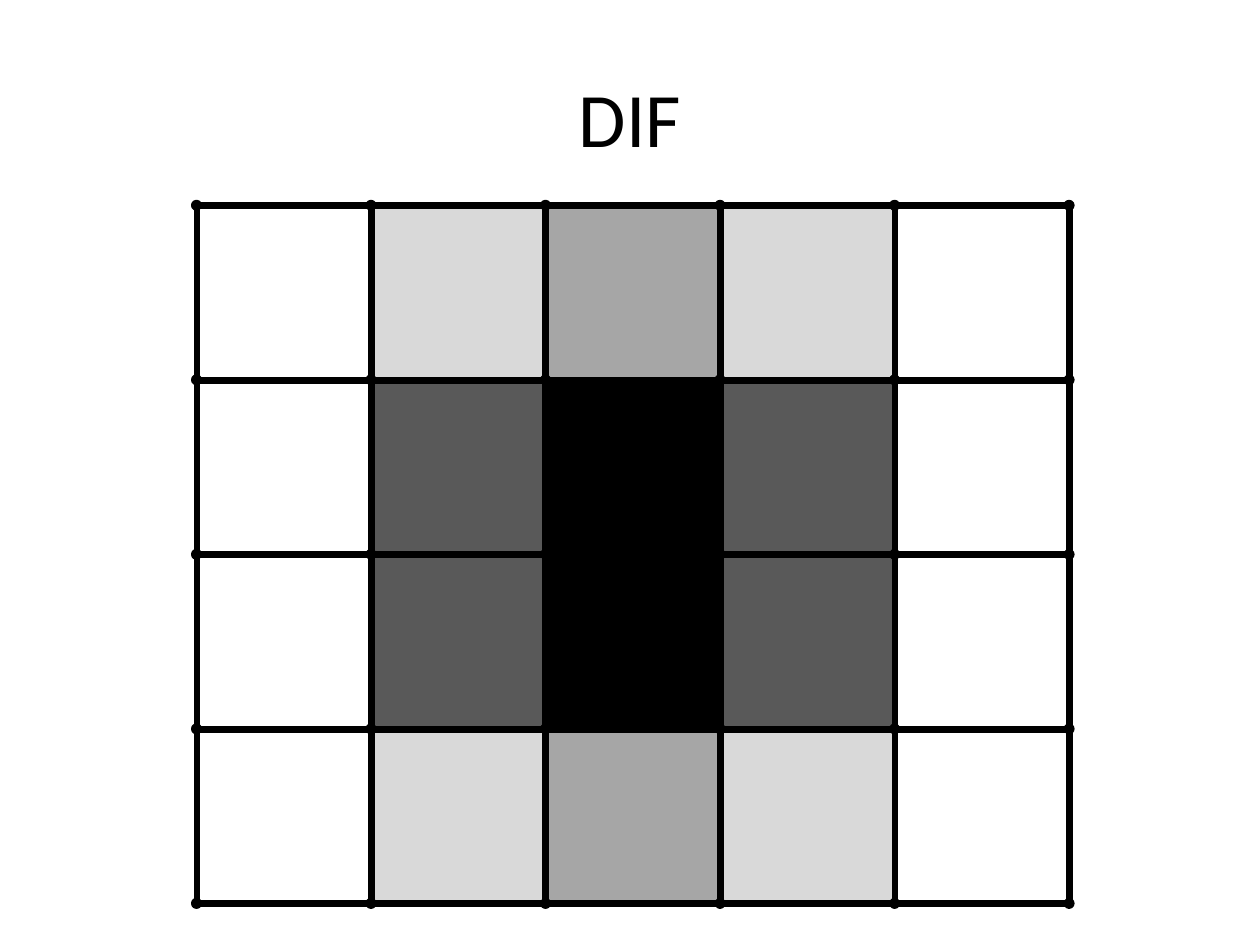
import pptx
import pptx.util
import pptx.dml.color
import pptx.enum.shapes
import pptx.enum.text

Inches = pptx.util.Inches
Pt = pptx.util.Pt
RGBColor = pptx.dml.color.RGBColor
Shape = pptx.enum.shapes.MSO_SHAPE

BLACK = RGBColor(0x00, 0x00, 0x00)
DARK = RGBColor(0x59, 0x59, 0x59)
MEDIUM = RGBColor(0xA6, 0xA6, 0xA6)
LIGHT = RGBColor(0xD9, 0xD9, 0xD9)

TITLE = "DIF"
OUTER_ROW = [None, LIGHT, MEDIUM, LIGHT, None]
INNER_ROW = [None, DARK, BLACK, DARK, None]
CELLS = [OUTER_ROW, INNER_ROW, INNER_ROW, OUTER_ROW]

GRID_LEFT, GRID_TOP = 1.55, 1.62
PITCH = 1.385
FRAME_SIZE, FRAME_BORDER = 1.41, 0.018
FILL_SIZE, FILL_INSET = 1.37, 0.01
DOT_SIZE, DOT_OFFSET = 0.06, -0.02


def add_at(page, kind, column, row, offset, size, color, outlined=True):
    left = GRID_LEFT + column * PITCH + offset
    top = GRID_TOP + row * PITCH + offset
    shape = page.shapes.add_shape(
        kind, Inches(left), Inches(top), Inches(size), Inches(size)
    )
    shape.shadow.inherit = False
    shape.fill.solid()
    shape.fill.fore_color.rgb = color
    if outlined:
        shape.line.color.rgb = color
        shape.line.width = Pt(2)
    else:
        shape.line.fill.background()
    return shape


def add_title(page):
    box = page.shapes.title
    box.left, box.top = Inches(0.5), Inches(0.3)
    box.width, box.height = Inches(9), Inches(1.25)
    box.text_frame.vertical_anchor = pptx.enum.text.MSO_ANCHOR.MIDDLE
    para = box.text_frame.paragraphs[0]
    para.alignment = pptx.enum.text.PP_ALIGN.CENTER
    span = para.add_run()
    span.text = TITLE
    span.font.name = "Calibri"
    span.font.size = Pt(44)
    span.font.color.rgb = BLACK


def main():
    deck = pptx.Presentation()
    deck.slide_width, deck.slide_height = Inches(10), Inches(7.5)
    page = deck.slides.add_slide(deck.slide_layouts[5])
    add_title(page)

    rows, columns = len(CELLS), len(CELLS[0])
    for row, colors in enumerate(CELLS):
        for column, color in enumerate(colors):
            if color is not None:
                add_at(page, Shape.RECTANGLE, column, row, FILL_INSET,
                       FILL_SIZE, color, outlined=False)
    for row in range(rows):
        for column in range(columns):
            frame = add_at(page, Shape.FRAME, column, row, 0, FRAME_SIZE, BLACK)
            frame.adjustments[0] = FRAME_BORDER
    for row in range(rows + 1):
        for column in range(columns + 1):
            add_at(page, Shape.OVAL, column, row, DOT_OFFSET, DOT_SIZE, BLACK)

    deck.save("out.pptx")


if __name__ == "__main__":
    main()
